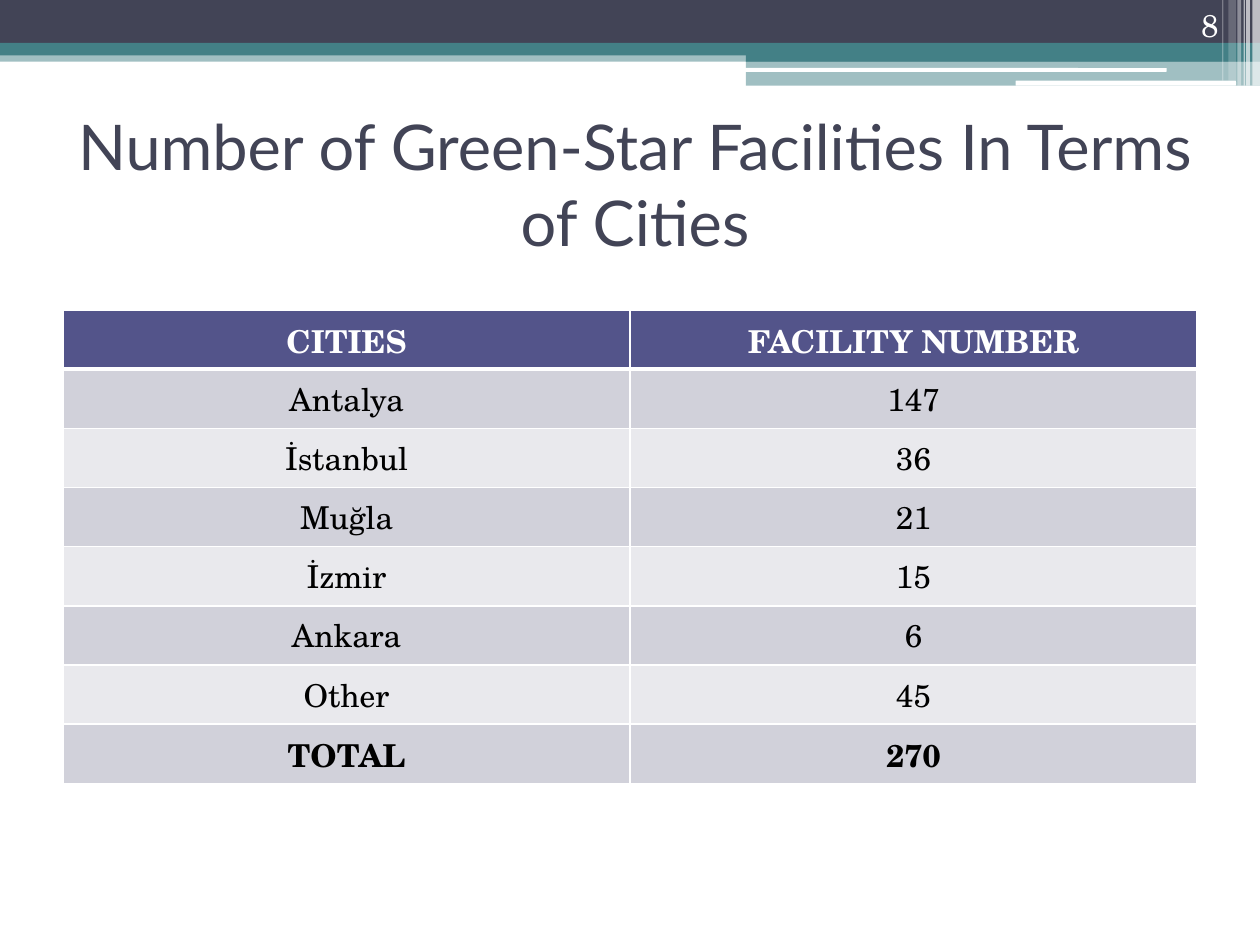
from lxml import etree
from pptx import Presentation
from pptx.dml.color import RGBColor
from pptx.enum import shapes, text
from pptx.oxml import ns
from pptx.util import Inches, Pt

WHITE = RGBColor(0xFF, 0xFF, 0xFF)
BLACK = RGBColor(0, 0, 0)
SLATE = RGBColor(0x42, 0x44, 0x56)
TEAL = RGBColor(0x43, 0x80, 0x86)
INDIGO = RGBColor(0x53, 0x54, 0x8A)
BANDS = RGBColor(0xE9, 0xE9, 0xED), RGBColor(0xD1, 0xD1, 0xDA)
HEAD_FONT, BODY_FONT = "Lato", "TeX Gyre Schola"

ROWS = [
    ("CITIES", "FACILITY NUMBER"),
    ("Antalya", "147"),
    ("İstanbul", "36"),
    ("Muğla", "21"),
    ("İzmir", "15"),
    ("Ankara", "6"),
    ("Other", "45"),
    ("TOTAL", "270"),
]


def write(tf, words, align, anchor, color, **font):
    tf.word_wrap = True
    tf.vertical_anchor = anchor
    p = tf.paragraphs[0]
    p.alignment = align
    r = p.add_run()
    r.text = words
    r.font.color.rgb = color
    for name, value in font.items():
        setattr(r.font, name, value)


def add_bar(slide, box, color, opacity=100, rounded=False):
    kind = shapes.MSO_SHAPE.ROUNDED_RECTANGLE if rounded else shapes.MSO_SHAPE.RECTANGLE
    sp = slide.shapes.add_shape(kind, *map(Inches, box))
    sp.shadow.inherit = False
    sp.fill.solid()
    sp.fill.fore_color.rgb = color
    sp.line.fill.background()
    if opacity < 100:
        clr = sp._element.spPr.find(".//" + ns.qn("a:srgbClr"))
        etree.SubElement(clr, ns.qn("a:alpha"), val=str(opacity * 1000))


def add_banner(slide, left, top, width):
    for y, h, color, opacity in [(0.4, 0.09, TEAL, 50), (0, 0.34, SLATE, 100),
                                 (0.34, 0.1, TEAL, 100)]:
        add_bar(slide, (left, top + y, width, h), color, opacity)
    step = 5.92
    for y, h, opacity in [(0.39, 0.1, 100), (0.48, 0.2, 50)]:
        add_bar(slide, (left + step, top + y, width - step, h), TEAL, opacity)
    for x, y, w, h in [(5.91, 0.54, 3.35, 0.03), (8.06, 0.64, 1.75, 0.04)]:
        add_bar(slide, (left + x, top + y, w, h), WHITE, rounded=True)
    # Pale stripes, by distance from the right edge
    for x, w, h, opacity in [(0.06, 0.06, 0.68, 65), (0.11, 0.03, 0.68, 65),
                             (0.13, 0.01, 0.68, 60), (0.18, 0.03, 0.68, 40),
                             (0.25, 0.06, 0.64, 20), (0.3, 0.01, 0.64, 30)]:
        add_bar(slide, (left + width - x, top, w, h), WHITE, opacity)


def add_title(slide, left, top, width, height):
    sp = slide.shapes.title
    box = dict(left=left, top=top, width=width, height=height)
    for name, value in box.items():
        setattr(sp, name, Inches(value))
    sp.text_frame.auto_size = text.MSO_AUTO_SIZE.NONE
    write(sp.text_frame, "Number of Green-Star Facilities In Terms of Cities",
          text.PP_ALIGN.CENTER, text.MSO_ANCHOR.MIDDLE, SLATE,
          name=HEAD_FONT, size=Pt(36))


def add_page_number(slide, left, top, width, height):
    sp = slide.shapes.add_textbox(*map(Inches, (left, top, width, height)))
    write(sp.text_frame, "8", text.PP_ALIGN.RIGHT, text.MSO_ANCHOR.BOTTOM, WHITE,
          name=BODY_FONT, size=Pt(18))


def set_borders(cell, **widths):
    """Draw white cell borders; the keys are the sides L, R, T and B."""
    tc_pr = cell._tc.get_or_add_tcPr()
    for i, (side, width) in enumerate(widths.items()):
        ln = etree.Element(ns.qn("a:ln" + side), w=str(Pt(width)))
        fill = etree.SubElement(ln, ns.qn("a:solidFill"))
        etree.SubElement(fill, ns.qn("a:srgbClr"), val=str(WHITE))
        tc_pr.insert(i, ln)


def add_city_table(slide, left, top, width, height):
    box = map(Inches, (left, top, width, height))
    table = slide.shapes.add_table(len(ROWS), len(ROWS[0]), *box).table
    for i, row in enumerate(ROWS):
        head = i == 0
        for j, words in enumerate(row):
            cell = table.cell(i, j)
            cell.fill.solid()
            cell.fill.fore_color.rgb = INDIGO if head else BANDS[i % 2]
            set_borders(cell, L=1, R=1, T=3 if i == 1 else 1, B=3 if head else 1)
            write(cell.text_frame, words, text.PP_ALIGN.CENTER, text.MSO_ANCHOR.TOP,
                  WHITE if head else BLACK, name=BODY_FONT, size=Pt(18),
                  bold=head or i == len(ROWS) - 1)


def main():
    prs = Presentation()
    prs.slide_width, prs.slide_height = Inches(10), Inches(7.5)
    slide = prs.slides.add_slide(prs.slide_layouts[5])
    add_banner(slide, 0, 0, 10)
    add_title(slide, 0.5, 1.08, 9.08, 0.75)
    add_page_number(slide, 8.94, 0, 0.83, 0.4)
    add_city_table(slide, 0.5, 2.46, 9, 3.76)
    prs.save("out.pptx")


if __name__ == "__main__":
    main()
